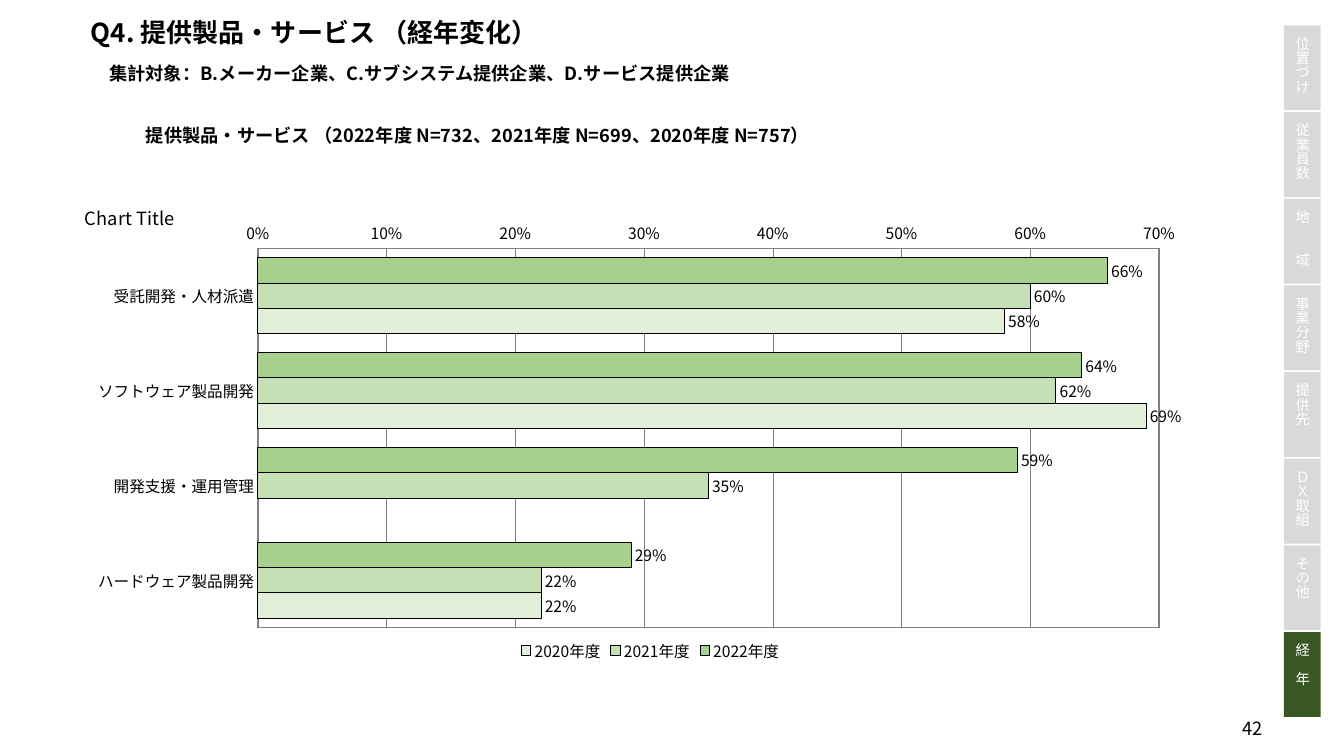
"""Build the survey slide on products and services, compared by year."""
from dataclasses import dataclass
from typing import Optional

from lxml import etree
from pptx import Presentation
from pptx.chart.data import CategoryChartData
from pptx.dml.color import RGBColor
from pptx.enum.chart import XL_CHART_TYPE, XL_LABEL_POSITION, XL_LEGEND_POSITION, XL_TICK_MARK
from pptx.enum.shapes import MSO_SHAPE
from pptx.enum.text import MSO_ANCHOR, MSO_AUTO_SIZE, PP_ALIGN
from pptx.oxml import parse_xml
from pptx.oxml.ns import nsdecls, qn
from pptx.util import Cm, Pt

BAR = XL_CHART_TYPE.BAR_CLUSTERED
OUTSIDE = XL_LABEL_POSITION.OUTSIDE_END
BOTTOM = XL_LEGEND_POSITION.BOTTOM
NO_TICK = XL_TICK_MARK.NONE
RECT = MSO_SHAPE.RECTANGLE
TOP, MIDDLE = MSO_ANCHOR.TOP, MSO_ANCHOR.MIDDLE
NO_FIT = MSO_AUTO_SIZE.NONE
LEFT, CENTER = PP_ALIGN.LEFT, PP_ALIGN.CENTER

BLACK = RGBColor(0x00, 0x00, 0x00)
WHITE = RGBColor(0xFF, 0xFF, 0xFF)
GRAY = RGBColor(0x80, 0x80, 0x80)
TAB_GRAY = RGBColor(0xD9, 0xD9, 0xD9)
TAB_GREEN = RGBColor(0x38, 0x57, 0x23)
GREEN_2022 = RGBColor(0xA9, 0xD1, 0x8E)
GREEN_2021 = RGBColor(0xC5, 0xE0, 0xB4)
GREEN_2020 = RGBColor(0xE2, 0xF0, 0xD9)
FONT = "Noto Sans CJK JP"


@dataclass(frozen=True)
class Tab:
    """A section tab on the right edge."""
    text: str
    fill: RGBColor = TAB_GRAY


@dataclass(frozen=True)
class Year:
    """One survey year as a chart series."""
    name: str
    values: tuple[Optional[float], ...]
    color: RGBColor


TABS = (Tab("位置づけ"), Tab("従業員数"), Tab("地　　域"), Tab("事業分野"),
        Tab("提供先"), Tab("ＤＸ取組"), Tab("その他"), Tab("経　年", TAB_GREEN))
TAB_LEFT, TAB_TOP, TAB_WIDTH, TAB_HEIGHT, TAB_PITCH = 34.82, 0.69, 1.0, 2.3, 2.35

CATEGORIES = ("受託開発・人材派遣", "ソフトウェア製品開発",
              "開発支援・運用管理", "ハードウェア製品開発")
YEARS = (Year("2022年度", (0.66, 0.64, 0.59, 0.29), GREEN_2022),
         Year("2021年度", (0.60, 0.62, 0.35, 0.22), GREEN_2021),
         Year("2020年度", (0.58, 0.69, None, 0.22), GREEN_2020))


def write(p, text: str, *, size: float = 14, color: RGBColor = BLACK, bold: bool = False,
          align=LEFT, spacing: float = 1.0, before: float = 0, indent: float = 0) -> None:
    """Add formatted text to a paragraph."""
    p.alignment = align
    p.line_spacing = spacing
    p.space_before = Pt(before)
    pPr = p._p.get_or_add_pPr()
    pPr.set("marL", str(Cm(indent)))
    pPr.set("indent", "0")
    r = p.add_run()
    r.text = text
    r.font.name = FONT
    r.font.size = Pt(size)
    r.font.bold = bold
    r.font.color.rgb = color


def add_box(s, left: float, top: float, width: float, height: float, anchor=TOP):
    """Add a wrapping text box and return its text frame."""
    tf = s.shapes.add_textbox(Cm(left), Cm(top), Cm(width), Cm(height)).text_frame
    tf.word_wrap = True
    tf.vertical_anchor = anchor
    return tf


def add_tab(s, tab: Tab, index: int) -> None:
    """Draw a section tab with vertical text."""
    sp = s.shapes.add_shape(RECT, Cm(TAB_LEFT), Cm(TAB_TOP + index * TAB_PITCH),
                            Cm(TAB_WIDTH), Cm(TAB_HEIGHT))
    sp.shadow.inherit = False
    sp.fill.solid()
    sp.fill.fore_color.rgb = tab.fill
    sp.line.fill.background()
    tf = sp.text_frame
    tf.margin_left = tf.margin_right = 0
    tf.margin_top = tf.margin_bottom = Cm(0.3)
    tf.vertical_anchor = MIDDLE
    tf._txBody.bodyPr.set("vert", "eaVert")
    write(tf.paragraphs[0], tab.text, size=11, color=WHITE, align=CENTER)


def set_layout(parent, **values: object) -> None:
    """Place a chart part by fractions of the chart area."""
    layout = parse_xml(f'<c:layout {nsdecls("c")}><c:manualLayout/></c:layout>')
    for name, value in values.items():
        etree.SubElement(layout[0], qn(f"c:{name}")).set("val", str(value))
    old = parent.find(qn("c:layout"))
    if old is None:
        parent.insert(0, layout)
    else:
        parent.replace(old, layout)


def format_axes(chart) -> None:
    """Format the category and percentage axes."""
    cat, val = chart.category_axis, chart.value_axis
    cat.reverse_order = True
    cat.format.line.color.rgb = GRAY
    cat.format.line.width = Pt(1)
    val.minimum_scale, val.maximum_scale, val.major_unit = 0, 0.7, 0.1
    val.tick_labels.number_format = "0%"
    val.tick_labels.number_format_is_linked = False
    val.format.line.fill.background()
    val.major_gridlines.format.line.color.rgb = GRAY
    val.major_gridlines.format.line.width = Pt(0.25)
    for axis in (cat, val):
        axis.major_tick_mark = axis.minor_tick_mark = NO_TICK


def add_year_chart(s):
    """Add the clustered bar chart and return it."""
    data = CategoryChartData(number_format="0%")
    data.categories = CATEGORIES
    for year in YEARS:
        data.add_series(year.name, year.values)
    chart = s.shapes.add_chart(BAR, Cm(2.21), Cm(5.26), Cm(30.86), Cm(12.8), data).chart
    chart.font.name = FONT
    chart.font.size = Pt(12)
    chart.font.color.rgb = BLACK
    chart.has_title = True
    write(chart.chart_title.text_frame.paragraphs[0], "Chart Title")
    chart.has_legend = True
    chart.legend.position = BOTTOM
    chart.legend.include_in_layout = False
    format_axes(chart)

    plot = chart.plots[0]
    plot.gap_width, plot.overlap = 75, 0
    plot.vary_by_categories = False
    for series, year in zip(plot.series, YEARS):
        series.format.fill.solid()
        series.format.fill.fore_color.rgb = year.color
        series.format.line.color.rgb = BLACK
        series.format.line.width = Pt(0.75)
        labels = series.data_labels
        labels.show_value = True
        labels.number_format = "0%"
        labels.number_format_is_linked = False
        labels.position = OUTSIDE

    area = chart.element.find(".//" + qn("c:plotArea"))
    set_layout(area, layoutTarget="inner", xMode="edge", yMode="edge",
               x=0.155, y=0.115, w=0.792, h=0.804)
    area.append(parse_xml(
        f'<c:spPr {nsdecls("c", "a")}><a:solidFill><a:srgbClr val="{WHITE}"/></a:solidFill>'
        f'<a:ln w="{Pt(1)}"><a:solidFill><a:srgbClr val="{GRAY}"/></a:solidFill></a:ln></c:spPr>'))
    set_layout(chart.element.find(".//" + qn("c:title")),
               xMode="edge", yMode="edge", x=0, y=0.01)
    return chart


def set_east_asian_font(root) -> None:
    """Give every run with a Latin font the same East Asian font."""
    for latin in list(root.iter(qn("a:latin"))):
        latin.addnext(parse_xml(f'<a:ea {nsdecls("a")} typeface="{FONT}"/>'))


def main() -> None:
    """Build and save the slide."""
    prs = Presentation()
    prs.slide_width, prs.slide_height = Cm(36.45), Cm(20.5)
    s = prs.slides.add_slide(prs.slide_layouts[5])

    title = s.shapes.title
    title.left, title.top, title.width, title.height = Cm(2.21), Cm(0.46), Cm(32), Cm(1.12)
    tf = title.text_frame
    tf.auto_size = NO_FIT
    tf.vertical_anchor = TOP
    write(tf.paragraphs[0], "Q4. 提供製品・サービス （経年変化）", size=20, bold=True, spacing=0.84)

    for index, tab in enumerate(TABS):
        add_tab(s, tab, index)

    tf = add_box(s, 2.21, 1.65, 32, 2.64)
    write(tf.paragraphs[0], "集計対象：B.メーカー企業、C.サブシステム提供企業、D.サービス提供企業",
          bold=True, spacing=0.84, indent=0.5)
    write(tf.add_paragraph(), "提供製品・サービス （2022年度 N=732、2021年度 N=699、2020年度 N=757）",
          bold=True, spacing=0.84, before=34, indent=1.5)

    tf = add_box(s, 33.1, 19.43, 1.73, 0.64, MIDDLE)
    write(tf.paragraphs[0], "42", align=CENTER)

    chart = add_year_chart(s)
    for root in (s.element, chart.element):
        set_east_asian_font(root)
    prs.save("out.pptx")


if __name__ == "__main__":
    main()
